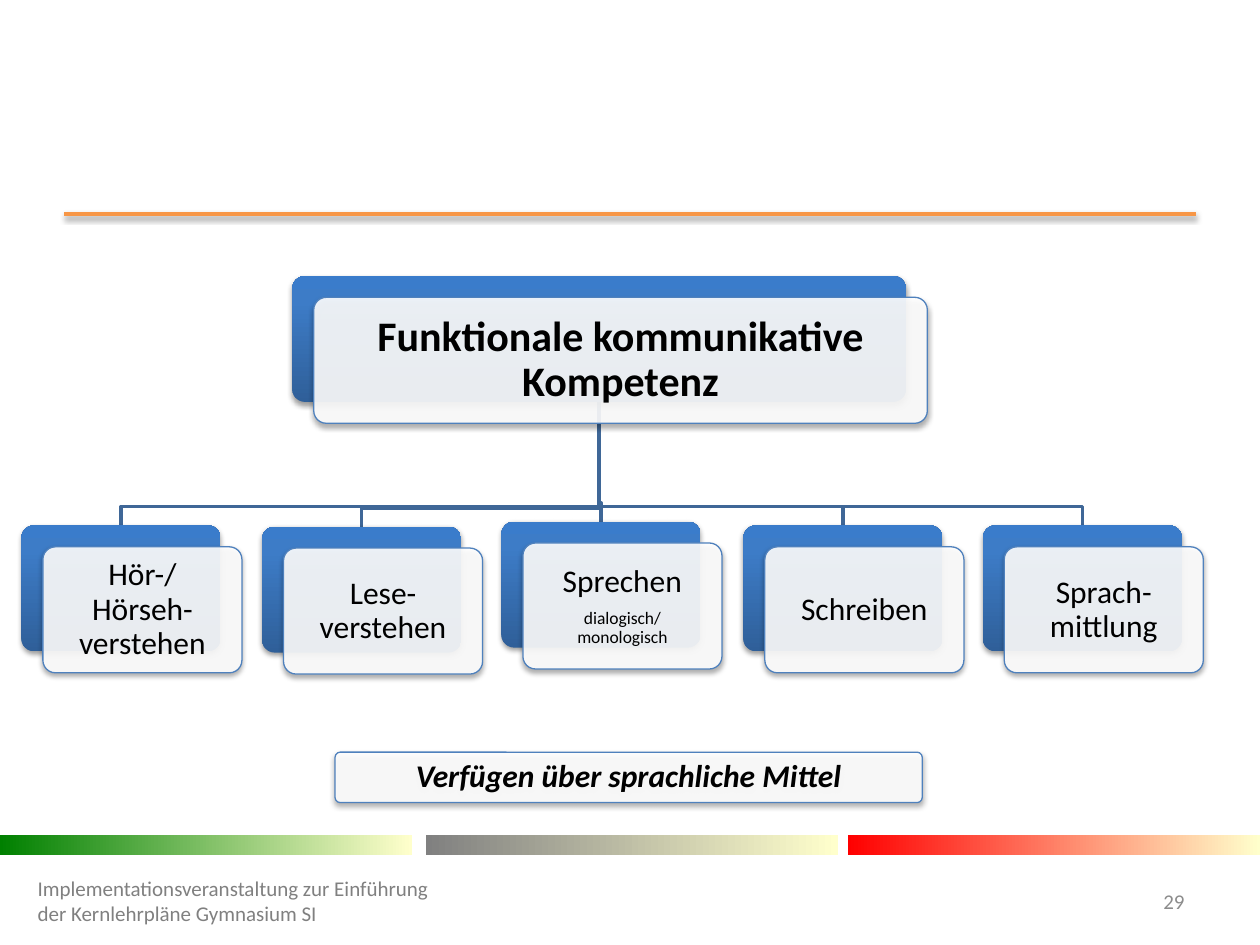
from lxml.etree import SubElement
from pptx import Presentation
from pptx.dml.color import RGBColor
from pptx.enum.shapes import MSO_CONNECTOR, MSO_SHAPE
from pptx.enum.text import MSO_ANCHOR, PP_ALIGN
from pptx.oxml.ns import qn
from pptx.util import Inches, Pt

COLORS = {
    "rule": "F79646",
    "branch": "3F6797",
    "outline": "4F81BD",
    "white": "FFFFFF",
    "black": "000000",
    "footer": "808080",
    "number": "8C8C8C",
    "cream": "FFFFCC",
    "green": "008000",
    "gray": "808080",
    "red": "FF0000",
    "blue_dark": "2F5F99",
    "blue_mid": "3D7CC7",
    "blue_light": "3A7CCB",
}
BLUE_STOPS = [(0, "blue_dark"), (80, "blue_mid"), (100, "blue_light")]
FONT = "Calibri"
CARD_WIDTH = 1.58
CARD_HEIGHT = 1
CARD_OFFSET = 0.17
ROOT = (2.32, 2.19, 4.87)
SKILLS = [
    (0.17, 4.17, ["Hör-/Hörseh-verstehen"]),
    (2.08, 4.18, ["Lese-verstehen"]),
    (3.98, 4.14, ["Sprechen", "dialogisch/\vmonologisch"]),
    (5.9, 4.17, ["Schreiben"]),
    (7.8, 4.17, ["Sprach-mittlung"]),
]


def color(name):
    return RGBColor.from_string(COLORS[name])


def add_color(parent, name, alpha=None):
    node = SubElement(parent, qn("a:srgbClr"), val=COLORS[name])
    if alpha is not None:
        SubElement(node, qn("a:alpha"), val=str(alpha * 1000))


def add_shadow(properties, opacity=35, distance=1.8):
    effects = properties.find(qn("a:effectLst"))
    if effects is None:
        effects = SubElement(properties, qn("a:effectLst"))
    shadow = SubElement(
        effects, qn("a:outerShdw"), blurRad=str(Pt(3.1)), dist=str(Pt(distance)),
        dir="5400000", rotWithShape="0")
    add_color(shadow, "black", opacity)


def fill_gradient(shape, stops, angle):
    shape.fill.gradient()
    gradient = shape._element.spPr.find(qn("a:gradFill"))
    for child in list(gradient):
        gradient.remove(child)
    stop_list = SubElement(gradient, qn("a:gsLst"))
    for position, name in stops:
        add_color(SubElement(stop_list, qn("a:gs"), pos=str(position * 1000)), name)
    SubElement(gradient, qn("a:lin"), ang=str(angle * 60000), scaled="0")


def add_block(page, kind, left, top, width, height):
    shape = page.shapes.add_shape(
        kind, Inches(left), Inches(top), Inches(width), Inches(height))
    if kind == MSO_SHAPE.ROUNDED_RECTANGLE:
        shape.adjustments[0] = 0.1
    shape.line.fill.background()
    shape.shadow.inherit = False
    return shape


def write(shape, lines, sizes, inset, align=PP_ALIGN.CENTER, name="black",
          bold=False, italic=False, spacing=0.9):
    frame = shape.text_frame
    frame.word_wrap = True
    frame.vertical_anchor = MSO_ANCHOR.MIDDLE
    frame.margin_left = frame.margin_right = Inches(inset)
    frame.margin_top = frame.margin_bottom = Inches(min(inset, 0.08))
    frame.text = "\n".join(lines)
    for para, size in zip(frame.paragraphs, sizes):
        para.alignment = align
        para.line_spacing = spacing
        for span in para.runs:
            span.font.name = FONT
            span.font.size = Pt(size)
            span.font.bold = bold
            span.font.italic = italic
            span.font.color.rgb = color(name)
    for para in frame.paragraphs[:-1]:
        para.space_after = Pt(6)


def add_panel(page, left, top, width, height):
    panel = add_block(page, MSO_SHAPE.ROUNDED_RECTANGLE, left, top, width, height)
    panel.fill.solid()
    panel.fill.fore_color.rgb = color("white")
    fill_color = panel._element.spPr.find(qn("a:solidFill"))[0]
    SubElement(fill_color, qn("a:alpha"), val="90000")
    panel.line.color.rgb = color("outline")
    panel.line.width = Pt(0.75)
    add_shadow(panel._element.spPr)
    return panel


def add_card(page, left, top, width):
    back = add_block(page, MSO_SHAPE.ROUNDED_RECTANGLE, left, top, width, CARD_HEIGHT)
    fill_gradient(back, BLUE_STOPS, 270)
    add_shadow(back._element.spPr, 38, 1.6)
    return add_panel(page, left + CARD_OFFSET, top + CARD_OFFSET, width, CARD_HEIGHT)


def add_branch(page, left, top):
    root_left, root_top, root_width = ROOT
    start_x = root_left + root_width / 2
    start_y = root_top + CARD_HEIGHT
    end_x = left + CARD_WIDTH / 2
    bend_y = top - 0.15
    builder = page.shapes.build_freeform(Inches(start_x), Inches(start_y))
    corners = [(start_x, bend_y), (end_x, bend_y), (end_x, top)]
    builder.add_line_segments([(Inches(x), Inches(y)) for x, y in corners], close=False)
    branch = builder.convert_to_shape()
    branch.fill.background()
    branch.line.color.rgb = color("branch")
    branch.line.width = Pt(2)
    branch.shadow.inherit = False


def add_rule(page):
    rule = page.shapes.add_connector(
        MSO_CONNECTOR.STRAIGHT, Inches(0.51), Inches(1.7), Inches(9.49), Inches(1.7))
    rule.line.color.rgb = color("rule")
    rule.line.width = Pt(2)
    add_shadow(rule._element.spPr, 38, 1.6)


def add_bands(page):
    for left, name in [(0, "green"), (3.38, "gray"), (6.73, "red")]:
        band = add_block(page, MSO_SHAPE.RECTANGLE, left, 6.63, 3.27, 0.16)
        fill_gradient(band, [(0, name), (100, "cream")], 0)


def add_footer(page, left, width, text, align, name):
    box = page.shapes.add_textbox(Inches(left), Inches(6.95), Inches(width), Inches(0.4))
    write(box, [text], [12], 0.1, align, name, spacing=1)


def main():
    deck = Presentation()
    deck.slide_width = Inches(10)
    deck.slide_height = Inches(7.5)
    page = deck.slides.add_slide(deck.slide_layouts[6])

    add_rule(page)
    add_bands(page)
    for left, top, lines in reversed(SKILLS):
        add_branch(page, left, top)
    root = add_card(page, *ROOT)
    write(root, ["Funktionale kommunikative Kompetenz"], [24], 0.13, bold=True)
    for left, top, lines in SKILLS:
        write(add_card(page, left, top, CARD_WIDTH), lines, [18, 10], 0.1)

    means = add_panel(page, 2.66, 5.97, 4.66, 0.4)
    write(means, ["Verfügen über sprachliche Mittel"], [18], 0.14, bold=True, italic=True)

    add_footer(page, 0.2, 3.31,
               "Implementationsveranstaltung zur Einführung der Kernlehrpläne Gymnasium SI",
               PP_ALIGN.LEFT, "footer")
    add_footer(page, 8.86, 0.64, "29", PP_ALIGN.RIGHT, "number")
    deck.save("out.pptx")


if __name__ == "__main__":
    main()
